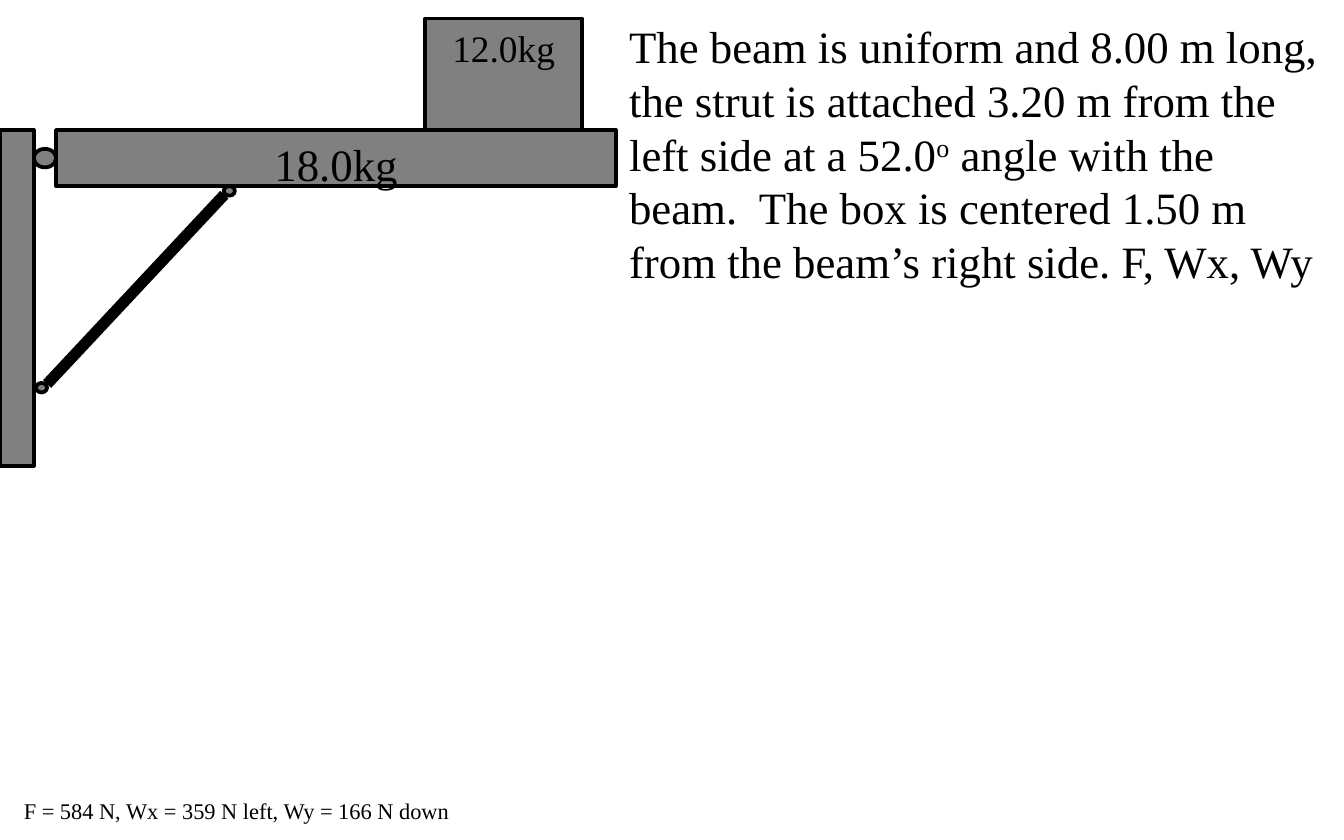
from lxml.etree import SubElement
from pptx import Presentation
from pptx.dml.color import RGBColor
from pptx.enum.shapes import MSO_CONNECTOR as CONN, MSO_SHAPE as SHAPE
from pptx.enum.text import MSO_ANCHOR as ANCHOR, MSO_AUTO_SIZE as AUTO, PP_ALIGN as ALIGN
from pptx.oxml.ns import qn
from pptx.util import Cm, Pt

BLACK, GREY = "000000", "808080"


def color(hex_code):
    return RGBColor.from_string(hex_code)


class Sheet:
    """Style of the exercise sheet and the slide being drawn."""
    font = "Times New Roman"

    def __init__(self, s):
        self.s = s
        self.diagram = s.shapes.add_group_shape()

    def format_run(self, r, size):
        r.font.name = self.font
        r.font.size = Pt(size)
        r.font.color.rgb = color(BLACK)

    def text(self, x, y, w, h, parts, size, wrap=True):
        """Add a text box; every second part is superscript."""
        tf = self.s.shapes.add_textbox(Cm(x), Cm(y), Cm(w), Cm(h)).text_frame
        tf.word_wrap = wrap
        tf.auto_size = AUTO.SHAPE_TO_FIT_TEXT
        for i, part in enumerate(parts):
            r = tf.paragraphs[0].add_run()
            r.text = part
            self.format_run(r, size)
            if i % 2:
                r._r.get_or_add_rPr().set("baseline", "30000")

    def body(self, kind, x, y, w, h, label="", size=24):
        """Add a grey outlined part of the diagram with an optional label."""
        sp = self.diagram.shapes.add_shape(kind, Cm(x), Cm(y), Cm(w), Cm(h))
        sp.shadow.inherit = False
        sp.fill.solid()
        sp.fill.fore_color.rgb = color(GREY)
        sp.line.color.rgb = color(BLACK)
        sp.line.width = Pt(2)
        if label:
            tf = sp.text_frame
            tf.text = label
            tf.vertical_anchor = ANCHOR.TOP
            p = tf.paragraphs[0]
            p.alignment = ALIGN.CENTER
            self.format_run(p.runs[0], size)

    def bar(self, x1, y1, x2, y2, width):
        line = self.diagram.shapes.add_connector(
            CONN.STRAIGHT, Cm(x1), Cm(y1), Cm(x2), Cm(y2))
        line.line.color.rgb = color(BLACK)
        line.line.width = Pt(width)
        SubElement(line._element.spPr, qn("a:effectLst"))


def main():
    prs = Presentation()
    prs.slide_width, prs.slide_height = Cm(25.4), Cm(15.88)
    sheet = Sheet(prs.slides.add_slide(prs.slide_layouts[6]))

    beam_top, beam_h = 2.46, 1.06
    wall_w, hinge_w, hinge_h = 0.64, 0.42, 0.35
    box_h = 2.11
    sheet.body(SHAPE.RECTANGLE, 0, beam_top, wall_w, 6.35)
    sheet.body(SHAPE.RECTANGLE, wall_w + hinge_w, beam_top, 10.58, beam_h, "18.0kg")
    sheet.body(SHAPE.OVAL, wall_w, beam_top + (beam_h - hinge_h) / 2, hinge_w, hinge_h)
    sheet.bar(0.89, 7.26, 4.24, 3.68, 6)
    sheet.body(SHAPE.RECTANGLE, 8.04, beam_top - box_h, 2.96, box_h, "12.0kg", 20)
    for x, y in ((0.68, 7.24), (4.23, beam_top + beam_h)):
        sheet.body(SHAPE.OVAL, x, y, 0.21, 0.18)

    sheet.text(0.2, 14.94, 8.79, 0.76,
               ["F = 584 N, Wx = 359 N left, Wy = 166 N down"], 12, wrap=False)
    sheet.text(11.64, 0.23, 13.55, 5.38, [
        "The beam is uniform and 8.00 m long, the strut is attached 3.20 m "
        "from the left side at a 52.0",
        "o",
        " angle with the beam.  The box is centered 1.50 m from the beam’s "
        "right side. F, Wx, Wy"], 24)

    prs.save("out.pptx")


if __name__ == "__main__":
    main()
